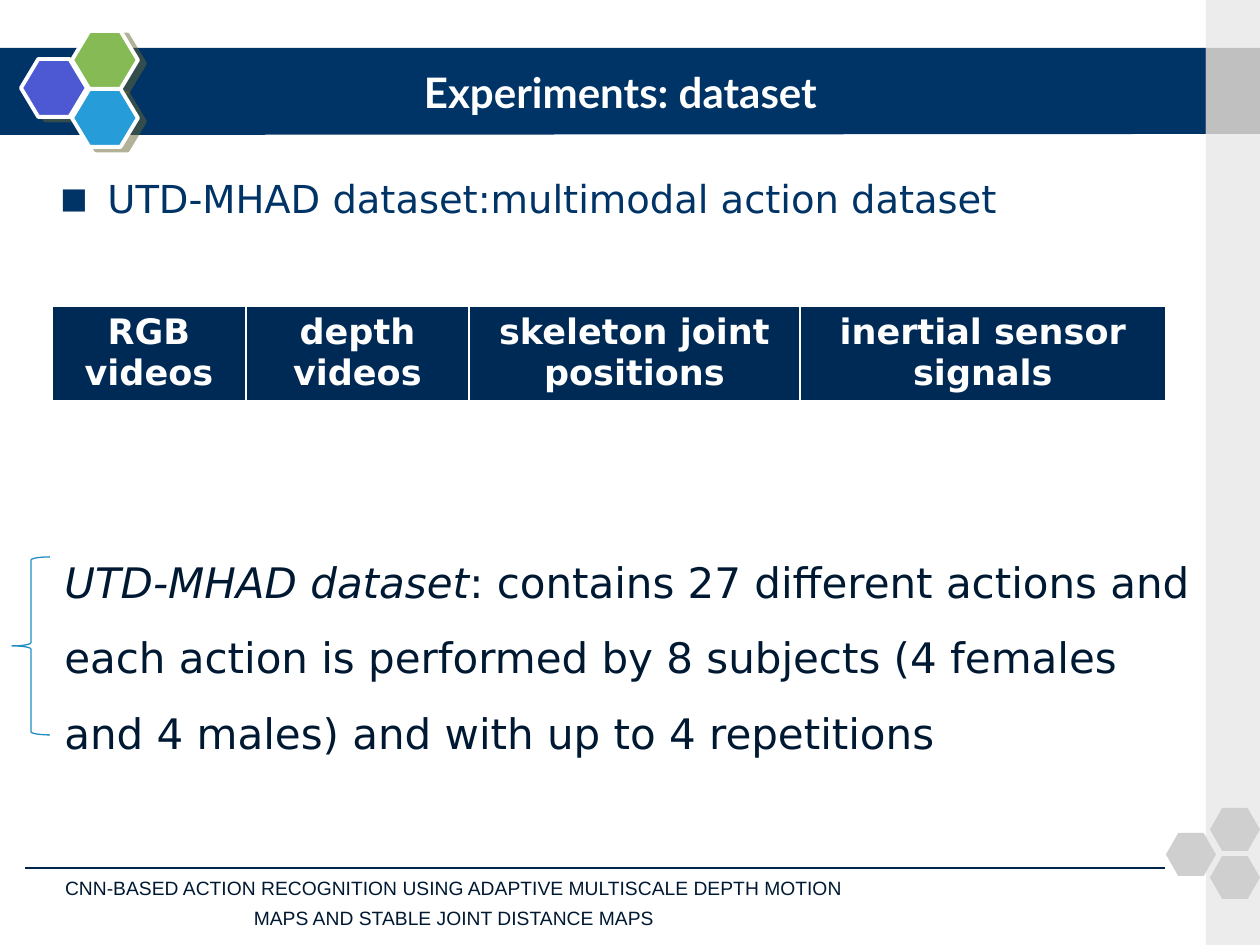
from lxml.etree import SubElement as Sub
from pptx import Presentation
from pptx.dml.color import RGBColor as RGB
from pptx.enum.shapes import MSO_CONNECTOR as LINK, MSO_SHAPE as KIND
from pptx.enum.text import MSO_ANCHOR as ANCHOR, PP_ALIGN as ALIGN
from pptx.oxml.ns import qn
from pptx.util import Pt


class Theme:
    navy, dark, ink = "003366", "002A56", "001933"
    rule, brace, white = "00264D", "228EC4", "FFFFFF"
    side, cap, pale, shade = "ECECEC", "C0C0C0", "CFCFCF", "666633"
    logo = "4C59D2", "85BA54", "269DD8"
    head, body, note = "Lato", "DejaVu Sans", "Arial"
    big, mid, cell, small = 24, 22, 20, 11


PX = 914400 / 126


def emu(*vals):
    return [round(v * PX) for v in vals]


def style(para, face, size, color, bold=False):
    for run in para.runs:
        font = run.font
        font.name, font.size, font.bold = face, Pt(size), bold
        font.color.rgb = RGB.from_string(color)


deck = Presentation()
deck.slide_width, deck.slide_height = emu(1260, 945)
slide = deck.slides.add_slide(deck.slide_layouts[5])
shapes = slide.shapes

# Title band
pen = shapes.build_freeform(0, 48, scale=PX)
pen.add_line_segments([(1206, 48), (1206, 134), (0, 135)])
band = pen.convert_to_shape()
band.shadow.inherit = False
band.fill.solid()
band.fill.fore_color.rgb = RGB.from_string(Theme.navy)
band.line.fill.background()

# Coloured hexagons, side strip and pale hexagons
hexes = [(21, 59), (72, 31), (72, 89)]
pales = [(1166, 833, 50, 43), (1210, 808, 50, 43), (1210, 856, 50, 43)]
parts = [(KIND.HEXAGON, (x, y, 66, 58), color, 0.3)
         for (x, y), color in zip(hexes, Theme.logo)]
parts += [(KIND.RECTANGLE, (1206, 0, 54, 945), Theme.side, None),
          (KIND.RECTANGLE, (1206, 48, 54, 86), Theme.cap, None)]
parts += [(KIND.HEXAGON, box, Theme.pale, 0.286) for box in pales]
for kind, box, color, adj in parts:
    part = shapes.add_shape(kind, *emu(*box))
    part.shadow.inherit = False
    part.fill.solid()
    part.fill.fore_color.rgb = RGB.from_string(color)
    part.line.fill.background()
    if adj:
        part.adjustments[0] = adj
    if color in Theme.logo:
        part.line.color.rgb = RGB.from_string(Theme.white)
        part.line.width = Pt(2.25)
        glow = part.element.spPr.find(qn("a:effectLst"))
        cast = Sub(glow, qn("a:outerShdw"), dist=str(Pt(4.5)),
                   dir=str(27 * 60000), algn="ctr", rotWithShape="0")
        tint = Sub(cast, qn("a:srgbClr"), val=Theme.shade)
        Sub(tint, qn("a:alpha"), val="50000")

# Title, brought in front of its band
title = shapes.title
title.left, title.top, title.width, title.height = emu(158, 53, 935, 78)
frame = title.text_frame
frame.text = "Experiments: dataset "
frame.vertical_anchor = ANCHOR.MIDDLE
frame.paragraphs[0].alignment = ALIGN.CENTER
style(frame.paragraphs[0], Theme.head, Theme.big, Theme.white, True)
title.element.getparent().append(title.element)

# Footer
foot = shapes.add_textbox(*emu(-23, 877, 954, 44)).text_frame
foot.word_wrap = True
foot.vertical_anchor = ANCHOR.MIDDLE
para = foot.paragraphs[0]
para.text = ("CNN-BASED ACTION RECOGNITION USING ADAPTIVE MULTISCALE DEPTH MOTION"
             "\vMAPS AND STABLE JOINT DISTANCE MAPS")
para.alignment, para.line_spacing = ALIGN.CENTER, 1.3
style(para, Theme.note, Theme.small, Theme.ink)
gap = foot.paragraphs[0].runs[0]._r.getnext()
Sub(gap, qn("a:rPr"), sz=str(Theme.small * 100))

rule = shapes.add_connector(LINK.STRAIGHT, *emu(25, 868, 1165, 868))
rule.line.color.rgb = RGB.from_string(Theme.rule)
rule.line.width = Pt(1.5)
Sub(rule.element.spPr, qn("a:effectLst"))

# Description with brace
about = shapes.add_textbox(*emu(52, 525, 1165, 242)).text_frame
about.word_wrap = True
para = about.paragraphs[0]
para.text = "UTD-MHAD dataset"
para.add_run().text = (": contains 27 different actions and each action is performed"
                       " by 8 subjects (4 females and 4 males)"
                       " and with up to 4 repetitions")
para.line_spacing = 1.5
style(para, Theme.body, Theme.big, Theme.ink)
para.runs[0].font.italic = True

brace = shapes.add_shape(KIND.LEFT_BRACE, *emu(12, 557, 38, 178))
brace.shadow.inherit = False
brace.fill.background()
brace.line.color.rgb = RGB.from_string(Theme.brace)
brace.line.width = Pt(0.75)

# Table of modalities
names = ["RGB videos", "depth videos", "skeleton joint positions",
         "inertial sensor signals"]
wides = [194, 223, 331, 366]
table = shapes.add_table(1, 4, *emu(52, 306, sum(wides), 95)).table
for col, wide, cell, name in zip(table.columns, emu(*wides),
                                 table.rows[0].cells, names):
    col.width = wide
    cell.text = name
    props = cell._tc.get_or_add_tcPr()
    for tag, size in [("lnL", 1), ("lnR", 1), ("lnT", 1), ("lnB", 3)]:
        edge = Sub(props, qn(f"a:{tag}"), w=str(Pt(size)))
        Sub(Sub(edge, qn("a:solidFill")), qn("a:srgbClr"), val=Theme.white)
    cell.fill.solid()
    cell.fill.fore_color.rgb = RGB.from_string(Theme.dark)
    para = cell.text_frame.paragraphs[0]
    para.alignment = ALIGN.CENTER
    style(para, Theme.body, Theme.cell, Theme.white, True)

# Bullet line
lead = shapes.add_textbox(*emu(48, 169, 1143, 59)).text_frame
lead.word_wrap = True
para = lead.paragraphs[0]
para.text = "UTD-MHAD dataset:multimodal action dataset"
props = para._p.get_or_add_pPr()
dent = emu(47)[0]
props.set("marL", str(dent))
props.set("indent", str(-dent))
Sub(props, qn("a:buSzPct"), val="75000")
Sub(props, qn("a:buFont"), typeface=Theme.body)
Sub(props, qn("a:buChar"), char="■")
style(para, Theme.body, Theme.mid, Theme.navy)

deck.save("out.pptx")
